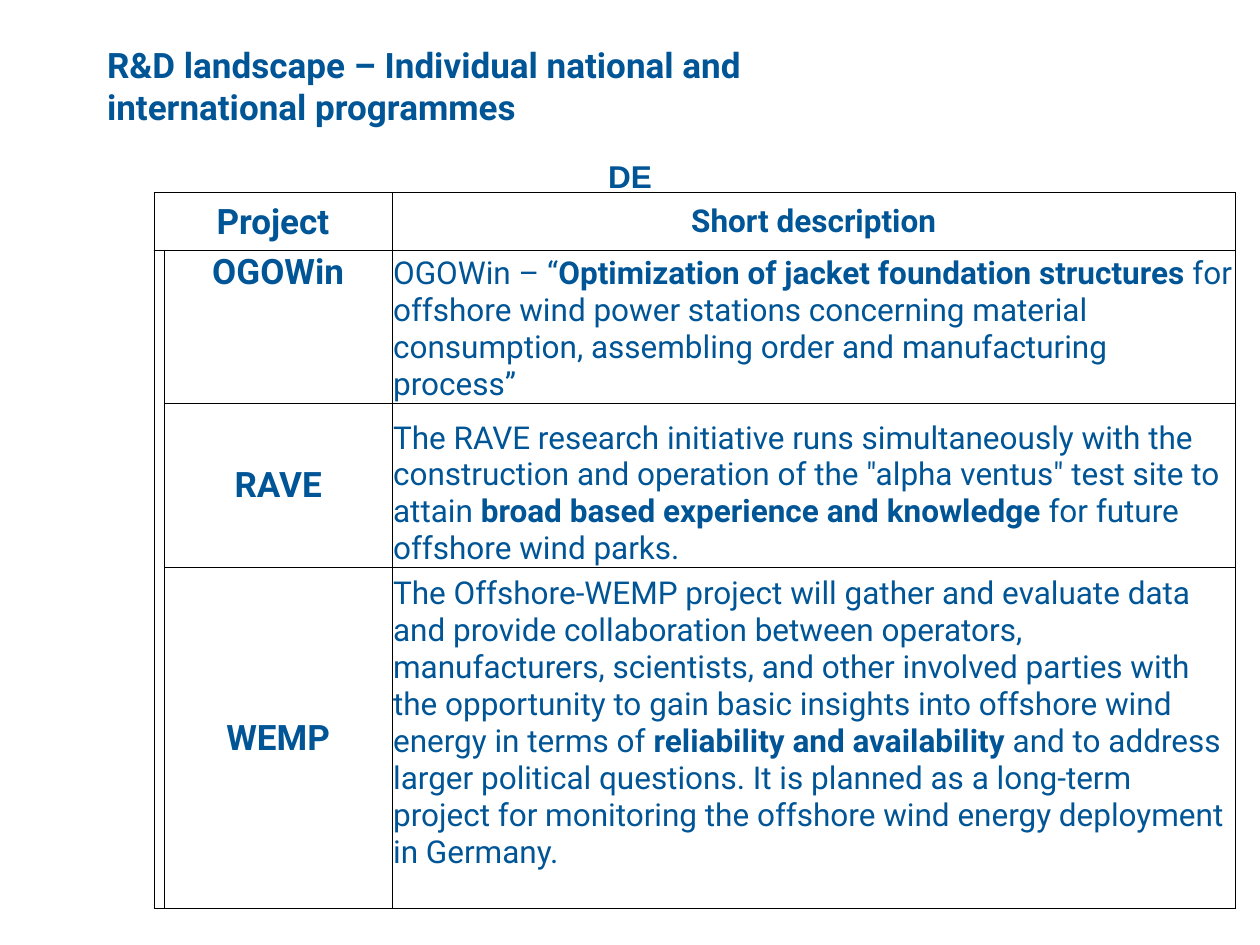
from lxml.etree import SubElement
from pptx import Presentation
from pptx.dml.color import RGBColor
from pptx.enum.text import MSO_ANCHOR, MSO_AUTO_SIZE, PP_ALIGN
from pptx.oxml.ns import qn
from pptx.util import Pt

COLORS = {"text": "005596", "border": "000000"}
TABLE_LEFT = 88
STUB_WIDTH, PROJECT_WIDTH, DESCRIPTION_WIDTH = 6, 130, 482
CELL_INSET = 0.7
LINE_HEIGHT = 21

# Description parts alternate between regular and bold.
PROJECTS = [
    ("OGOWin", MSO_ANCHOR.TOP, 57, 0, [
        "OGOWin – “",
        "Optimization of jacket foundation structures",
        " for offshore wind power stations concerning material consumption, "
        "assembling order and manufacturing process”"]),
    ("RAVE", MSO_ANCHOR.MIDDLE, 94, 0, [
        "The RAVE research initiative runs simultaneously with the construction "
        "and operation of the \"alpha ventus\" test site to attain ",
        "broad based experience and knowledge ",
        "for future offshore wind parks."]),
    ("WEMP", MSO_ANCHOR.MIDDLE, 140, LINE_HEIGHT, [
        "The Offshore-WEMP project will gather and evaluate data and provide "
        "collaboration between operators, manufacturers, scientists, and other "
        "involved parties with the opportunity to gain basic insights into "
        "offshore wind energy in terms of ",
        "reliability and availability ",
        "and to address larger political questions. It is planned as a "
        "long-term project for monitoring the offshore wind energy deployment "
        "in Germany."]),
]


def style_paragraph(paragraph, size, bold=True, align=PP_ALIGN.LEFT, font="Roboto"):
    paragraph.alignment = align
    paragraph.font.name = font
    paragraph.font.size = Pt(size)
    paragraph.font.bold = bold
    paragraph.font.color.rgb = RGBColor.from_string(COLORS["text"])


def add_borders(cell):
    properties = cell._tc.get_or_add_tcPr()
    for position, side in enumerate(("a:lnL", "a:lnR", "a:lnT", "a:lnB")):
        line = SubElement(properties, qn(side), w=str(Pt(0.5)))
        fill = SubElement(line, qn("a:solidFill"))
        SubElement(fill, qn("a:srgbClr"), val=COLORS["border"])
        properties.insert(position, line)


def add_grid(slide, top, widths, heights):
    """Add a plain table with thin borders and tight cell insets."""
    frame = slide.shapes.add_table(
        len(heights), len(widths), Pt(TABLE_LEFT), Pt(top),
        Pt(sum(widths)), Pt(sum(heights)))
    table = frame.table
    table.first_row = table.horz_banding = False
    for column, width in zip(table.columns, widths):
        column.width = Pt(width)
    for row, height in zip(table.rows, heights):
        row.height = Pt(height)
    for cell in table.iter_cells():
        cell.margin_left = cell.margin_right = cell.margin_top = Pt(CELL_INSET)
        cell.margin_bottom = 0
        cell.fill.background()
        add_borders(cell)
    return table


def fill_label(cell, text, size, anchor=MSO_ANCHOR.MIDDLE):
    cell.text = text
    cell.vertical_anchor = anchor
    style_paragraph(cell.text_frame.paragraphs[0], size, align=PP_ALIGN.CENTER)


def fill_description(cell, parts, space_below):
    cell.vertical_anchor = MSO_ANCHOR.BOTTOM
    cell.margin_bottom = Pt(space_below)
    paragraph = cell.text_frame.paragraphs[0]
    style_paragraph(paragraph, 18, bold=False)
    for index, part in enumerate(parts):
        run = paragraph.add_run()
        run.text = part
        if index % 2:
            run.font.bold = True


def add_project_table(slide):
    table = add_grid(slide, 143.3,
                     [STUB_WIDTH, PROJECT_WIDTH, DESCRIPTION_WIDTH],
                     [project[2] for project in PROJECTS])
    table.cell(0, 0).merge(table.cell(len(PROJECTS) - 1, 0))
    for row, (name, anchor, _, space_below, parts) in enumerate(PROJECTS):
        fill_label(table.cell(row, 1), name, 20, anchor)
        fill_description(table.cell(row, 2), parts, space_below)


def add_country(slide):
    country = slide.shapes.add_textbox(Pt(263.5), Pt(86.4), Pt(193), Pt(29)).text_frame
    country.word_wrap = True
    country.auto_size = MSO_AUTO_SIZE.SHAPE_TO_FIT_TEXT
    country.text = "DE"
    style_paragraph(country.paragraphs[0], 18, align=PP_ALIGN.CENTER, font="Arial")


def set_title(slide):
    title = slide.shapes.title
    title.left, title.top, title.width, title.height = Pt(54), Pt(21), Pt(430.5), Pt(55.5)
    frame = title.text_frame
    frame.text = "R&D landscape – Individual national and international programmes"
    frame.word_wrap = True
    frame.auto_size = MSO_AUTO_SIZE.SHAPE_TO_FIT_TEXT
    frame.vertical_anchor = MSO_ANCHOR.TOP
    style_paragraph(frame.paragraphs[0], 20)


def add_header(slide):
    header = add_grid(slide, 110, [STUB_WIDTH + PROJECT_WIDTH, DESCRIPTION_WIDTH], [33.3])
    fill_label(header.cell(0, 0), "Project", 20)
    fill_label(header.cell(0, 1), "Short description", 18)


def main():
    presentation = Presentation()
    presentation.slide_width, presentation.slide_height = Pt(720), Pt(540)
    slide = presentation.slides.add_slide(presentation.slide_layouts[5])
    set_title(slide)
    add_project_table(slide)
    add_country(slide)
    add_header(slide)
    presentation.save("out.pptx")


if __name__ == "__main__":
    main()
